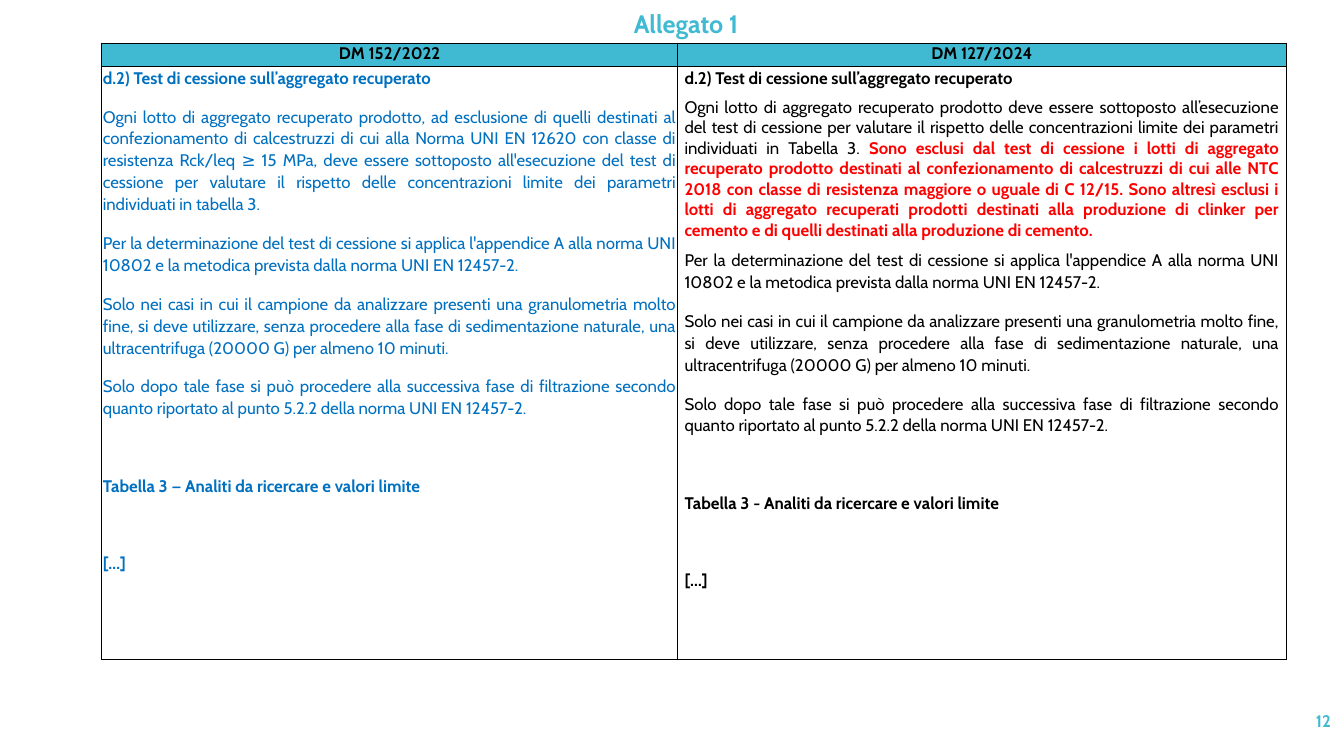
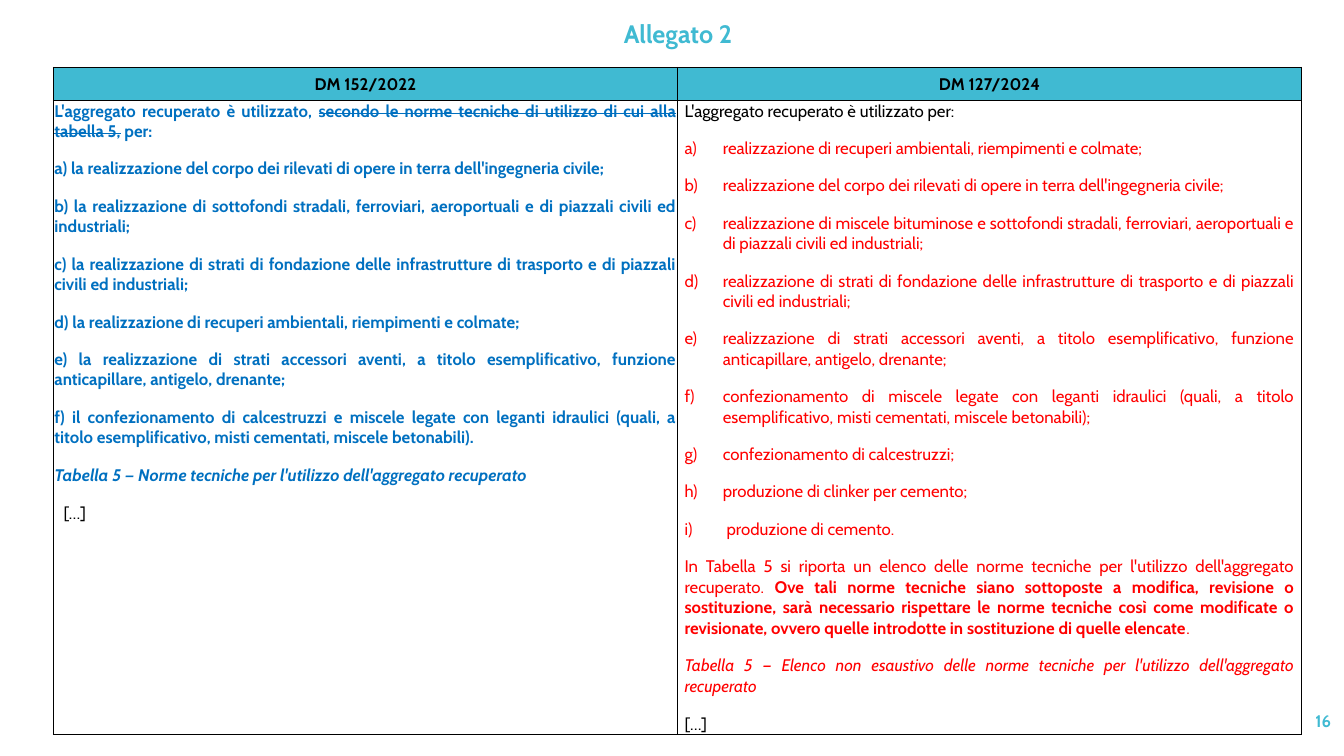
"""Builds two slides comparing the annexes of DM 152/2022 and DM 127/2024."""
from lxml import etree
from pptx import Presentation
from pptx.dml.color import RGBColor
from pptx.enum.text import MSO_ANCHOR, MSO_AUTO_SIZE, PP_ALIGN
from pptx.oxml.ns import qn
from pptx.util import Inches, Pt

CENTER, RIGHT, JUSTIFY = PP_ALIGN.CENTER, PP_ALIGN.RIGHT, PP_ALIGN.JUSTIFY
TOP, MIDDLE = MSO_ANCHOR.TOP, MSO_ANCHOR.MIDDLE
NO_AUTOFIT = MSO_AUTO_SIZE.NONE

TEAL = RGBColor(0x40, 0xBA, 0xD2)
BLUE = RGBColor(0x00, 0x70, 0xC0)
RED = RGBColor(0xFF, 0x00, 0x00)
BLACK = RGBColor(0x00, 0x00, 0x00)
WHITE = RGBColor(0xFF, 0xFF, 0xFF)
FONT = "Cabin"

OLD_DECREE, NEW_DECREE = "DM 152/2022", "DM 127/2024"
BOLD = {"bold": True}
ITALIC = {"italic": True}
SECTION_GAP = {"bold": True, "before": 33.5}
LETTERED = {"color": RED, "indent": 0.38, "hanging": 0.38, "numbering": "alphaLcParenR"}

TEST_HEADING = "d.2) Test di cessione sull’aggregato recuperato"
TEST_STANDARD = (
    "Per la determinazione del test di cessione si applica l'appendice A alla norma UNI "
    "10802 e la metodica prevista dalla norma UNI EN 12457-2."
)
TEST_GRAIN_SIZE = (
    "Solo nei casi in cui il campione da analizzare presenti una granulometria molto fine, "
    "si deve utilizzare, senza procedere alla fase di sedimentazione naturale, una "
    "ultracentrifuga (20000 G) per almeno 10 minuti."
)
TEST_FILTRATION = (
    "Solo dopo tale fase si può procedere alla successiva fase di filtrazione secondo "
    "quanto riportato al punto 5.2.2 della norma UNI EN 12457-2."
)
OMITTED = "[…]"

OLD_TEST = [
    (TEST_HEADING, BOLD),
    ("Ogni lotto di aggregato recuperato prodotto, ad esclusione di quelli destinati al "
     "confezionamento di calcestruzzi di cui alla Norma UNI EN 12620 con classe di "
     "resistenza Rck/leq ≥ 15 MPa, deve essere sottoposto all'esecuzione del test di "
     "cessione per valutare il rispetto delle concentrazioni limite dei parametri "
     "individuati in tabella 3.", {}),
    (TEST_STANDARD, {}),
    (TEST_GRAIN_SIZE, {}),
    (TEST_FILTRATION, {}),
    ("Tabella 3 — Analiti da ricercare e valori limite", SECTION_GAP),
    (OMITTED, SECTION_GAP),
]
NEW_TEST = [
    (TEST_HEADING, BOLD),
    ([("Ogni lotto di aggregato recuperato prodotto deve essere sottoposto all’esecuzione "
       "del test di cessione per valutare il rispetto delle concentrazioni limite dei "
       "parametri individuati in Tabella 3. ", {}),
      ("Sono esclusi dal test di cessione i lotti di aggregato recuperato prodotto "
       "destinati al confezionamento di calcestruzzi di cui alle NTC 2018 con classe di "
       "resistenza maggiore o uguale di C 12/15. Sono altresì esclusi i lotti di aggregato "
       "recuperati prodotti destinati alla produzione di clinker per cemento e di quelli "
       "destinati alla produzione di cemento.", {"color": RED, "bold": True})],
     {"before": 0, "after": 0, "spacing": 1.0}),
    (TEST_STANDARD, {}),
    (TEST_GRAIN_SIZE, {}),
    (TEST_FILTRATION, {}),
    ("Tabella 3 - Analiti da ricercare e valori limite", SECTION_GAP),
    (OMITTED, SECTION_GAP),
]

OLD_USES = [
    ([("L'aggregato recuperato è utilizzato, ", {}),
      ("secondo le norme tecniche di utilizzo di cui alla tabella 5,", {"strike": True}),
      (" per:", {})], {}),
    ("a) la realizzazione del corpo dei rilevati di opere in terra dell'ingegneria civile;", {}),
    ("b) la realizzazione di sottofondi stradali, ferroviari, aeroportuali e di piazzali "
     "civili ed industriali;", {}),
    ("c) la realizzazione di strati di fondazione delle infrastrutture di trasporto e di "
     "piazzali civili ed industriali;", {}),
    ("d) la realizzazione di recuperi ambientali, riempimenti e colmate;", {}),
    ("e) la realizzazione di strati accessori aventi, a titolo esemplificativo, funzione "
     "anticapillare, antigelo, drenante;", {}),
    ("f) il confezionamento di calcestruzzi e miscele legate con leganti idraulici (quali, "
     "a titolo esemplificativo, misti cementati, miscele betonabili).", {}),
    ("Tabella 5 — Norme tecniche per l'utilizzo dell'aggregato recuperato", ITALIC),
    (OMITTED, {"color": BLACK, "bold": False, "indent": 0.09, "spacing": 1.04}),
]
NEW_USE_ITEMS = [
    "realizzazione di recuperi ambientali, riempimenti e colmate;",
    "realizzazione del corpo dei rilevati di opere in terra dell'ingegneria civile;",
    "realizzazione di miscele bituminose e sottofondi stradali, ferroviari, aeroportuali e "
    "di piazzali civili ed industriali;",
    "realizzazione di strati di fondazione delle infrastrutture di trasporto e di piazzali "
    "civili ed industriali;",
    "realizzazione di strati accessori aventi, a titolo esemplificativo, funzione "
    "anticapillare, antigelo, drenante;",
    "confezionamento di miscele legate con leganti idraulici (quali, a titolo "
    "esemplificativo, misti cementati, miscele betonabili);",
    "confezionamento di calcestruzzi;",
    "produzione di clinker per cemento;",
    " produzione di cemento.",
]
NEW_USES = [
    ("L'aggregato recuperato è utilizzato per:", {}),
    *[(item, LETTERED) for item in NEW_USE_ITEMS],
    ([("In Tabella 5 si riporta un elenco delle norme tecniche per l'utilizzo "
       "dell'aggregato recuperato. ", {}),
      ("Ove tali norme tecniche siano sottoposte a modifica, revisione o sostituzione, sarà "
       "necessario rispettare le norme tecniche così come modificate o revisionate, ovvero "
       "quelle introdotte in sostituzione di quelle elencate", BOLD),
      (".", {})], {"color": RED}),
    ("Tabella 5 — Elenco non esaustivo delle norme tecniche per l'utilizzo dell'aggregato "
     "recuperato", {"color": RED, "italic": True}),
    (OMITTED, {"spacing": 1.04}),
]


def add_run(paragraph, text, size=12, color=BLACK, bold=False, italic=False, strike=False):
    """Append one formatted run."""
    run = paragraph.add_run()
    run.text = text
    font = run.font
    font.name, font.size, font.bold, font.italic = FONT, Pt(size), bold, italic
    font.color.rgb = color
    if strike:
        run._r.get_or_add_rPr().set("strike", "sngStrike")


def add_text(frame, content, align=JUSTIFY, spacing=1.0, before=6, after=6,
             indent=0, hanging=0, numbering=None, **run_format):
    """Write a paragraph from a string or from (text, format) runs."""
    first = frame.paragraphs[0]
    paragraph = frame.add_paragraph() if first.runs else first
    paragraph.alignment, paragraph.line_spacing = align, spacing
    paragraph.space_before, paragraph.space_after = Pt(before), Pt(after)
    properties = paragraph._p.get_or_add_pPr()
    properties.set("marL", str(Inches(indent)))
    properties.set("indent", str(-Inches(hanging)))
    if numbering:
        etree.SubElement(properties, qn("a:buAutoNum"), type=numbering)
    runs = [(content, {})] if isinstance(content, str) else content
    for text, override in runs:
        add_run(paragraph, text, **{**run_format, **override})


def set_borders(cell, color=BLACK, width=1):
    """Draw a solid line on all four sides of a cell."""
    properties = cell._tc.get_or_add_tcPr()
    for position, side in enumerate(("a:lnL", "a:lnR", "a:lnT", "a:lnB")):
        line = etree.Element(qn(side), w=str(Pt(width)))
        fill = etree.SubElement(line, qn("a:solidFill"))
        etree.SubElement(fill, qn("a:srgbClr"), val=str(color))
        properties.insert(position, line)


class DecreeDeck:
    """Holds the presentation style and the current slide."""

    def __init__(self):
        """Start a widescreen presentation."""
        self.presentation = Presentation()
        self.presentation.slide_width = Inches(13.33)
        self.presentation.slide_height = Inches(7.5)
        self.slide = None

    def new_slide(self, title, left, top, number):
        """Add a slide with its heading and page number."""
        self.slide = self.presentation.slides.add_slide(self.presentation.slide_layouts[5])
        heading = self.slide.shapes.title
        heading.left, heading.top = Inches(left), Inches(top)
        heading.width, heading.height = Inches(6.67), Inches(0.43)
        self.fill_frame(heading.text_frame, TOP, title, align=CENTER, spacing=1.15, size=18)
        page = self.slide.shapes.add_textbox(
            Inches(11.63), Inches(6.95), Inches(1.67), Inches(0.4))
        self.fill_frame(page.text_frame, MIDDLE, number, align=RIGHT, before=0, after=0)

    def fill_frame(self, frame, anchor, text, **text_format):
        """Write bold accent text in a fixed-size frame."""
        frame.word_wrap, frame.auto_size = True, NO_AUTOFIT
        frame.vertical_anchor = anchor
        add_text(frame, text, color=TEAL, bold=True, **text_format)

    def fill_cell(self, cell, paragraphs, fill, inset, anchor=TOP, **defaults):
        """Fill, border and write one table cell."""
        cell.fill.solid()
        cell.fill.fore_color.rgb = fill
        set_borders(cell)
        cell.margin_left = cell.margin_right = Inches(inset)
        cell.margin_top = cell.margin_bottom = 0
        cell.vertical_anchor = anchor
        for content, override in paragraphs:
            add_text(cell.text_frame, content, **{**defaults, **override})

    def comparison(self, left, top, widths, heights, old, new,
                   header, old_format, new_format):
        """Add the table that sets the old decree beside the new one."""
        table = self.slide.shapes.add_table(
            2, 2, Inches(left), Inches(top),
            Inches(sum(widths)), Inches(sum(heights))).table
        for column, width in zip(table.columns, widths):
            column.width = Inches(width)
        for row, height in zip(table.rows, heights):
            row.height = Inches(height)
        sides = ((OLD_DECREE, old, 0, 0.01, old_format),
                 (NEW_DECREE, new, 0.05, 0.07, new_format))
        for index, (decree, body, header_inset, body_inset, body_format) in enumerate(sides):
            self.fill_cell(table.cell(0, index), [(decree, BOLD)], TEAL, header_inset,
                           align=CENTER, before=0, **header)
            self.fill_cell(table.cell(1, index), body, WHITE, body_inset, **body_format)

    def save(self):
        """Save the finished presentation."""
        self.presentation.save("out.pptx")


def main():
    """Build both annex slides."""
    deck = DecreeDeck()
    deck.new_slide("Allegato 1", 3.47, -0.01, "12")
    deck.comparison(1.01, 0.43, (5.71, 6.04), (0.23, 5.88), OLD_TEST, NEW_TEST,
                    header={"anchor": TOP},
                    old_format={"color": BLUE, "spacing": 1.07},
                    new_format={"spacing": 1.07})
    deck.new_slide("Allegato 2", 3.39, 0.09, "16")
    deck.comparison(0.53, 0.67, (6.19, 6.19), (0.33, 6.2), OLD_USES, NEW_USES,
                    header={"anchor": MIDDLE},
                    old_format={"color": BLUE, "bold": True},
                    new_format={})
    deck.save()


if __name__ == "__main__":
    main()
